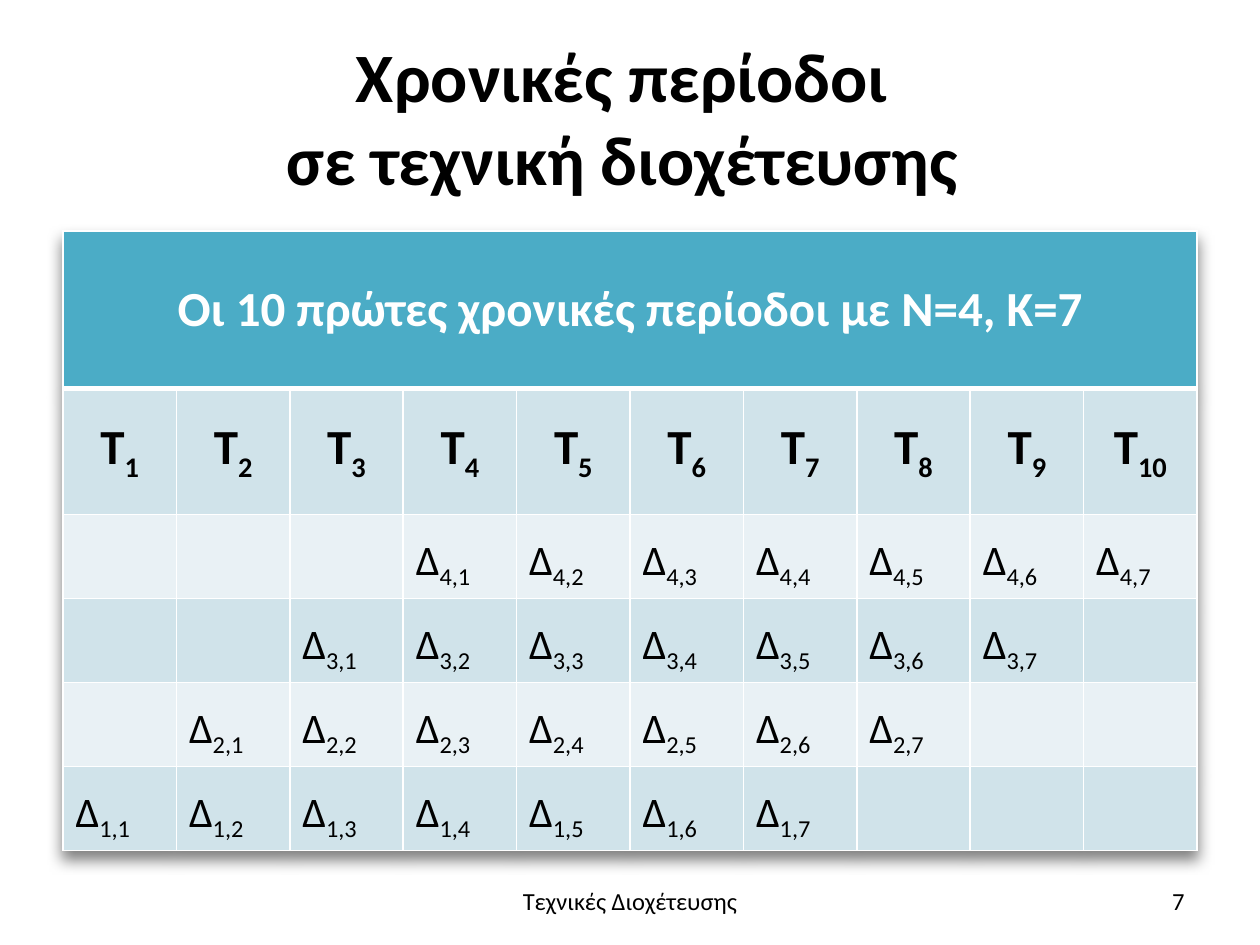
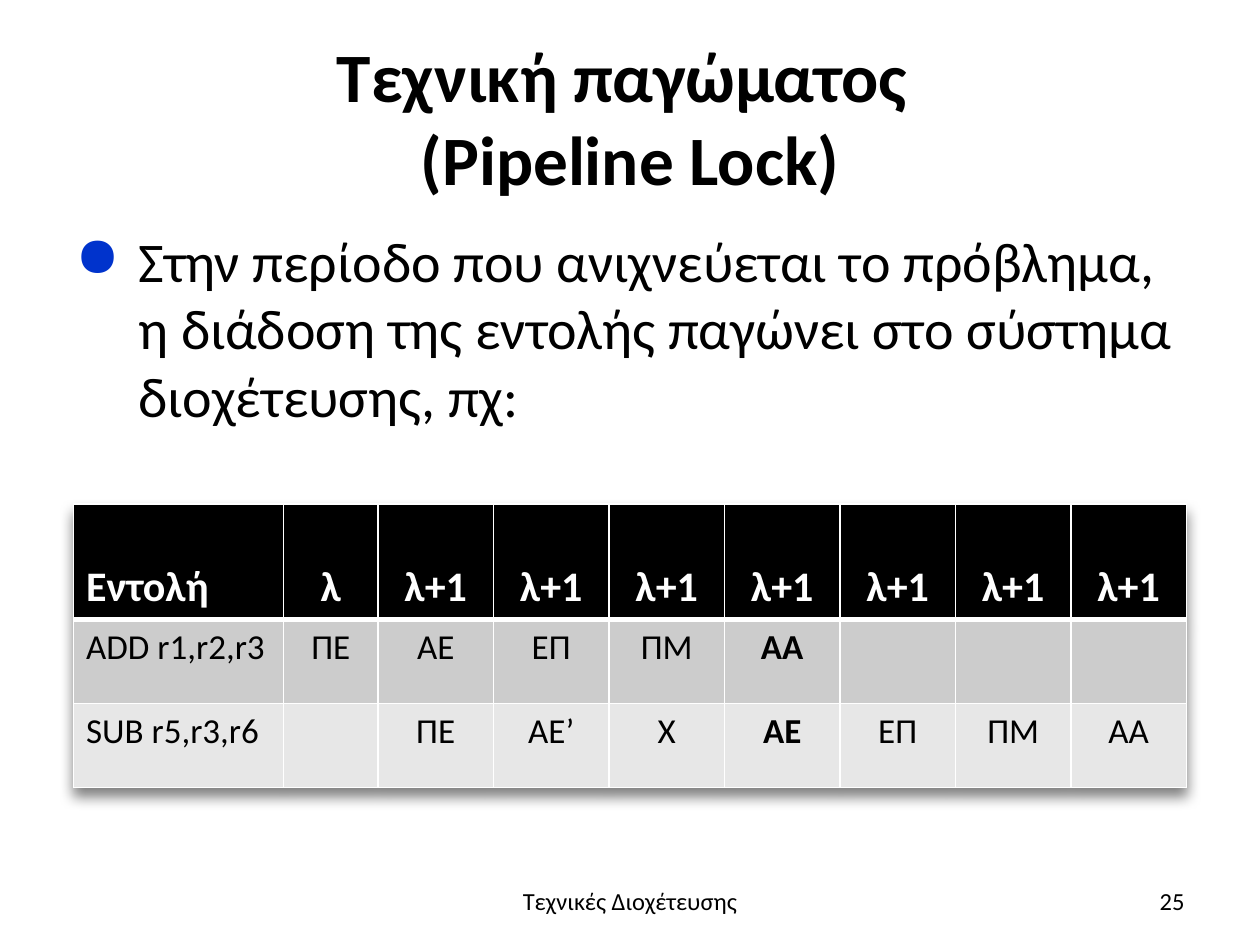
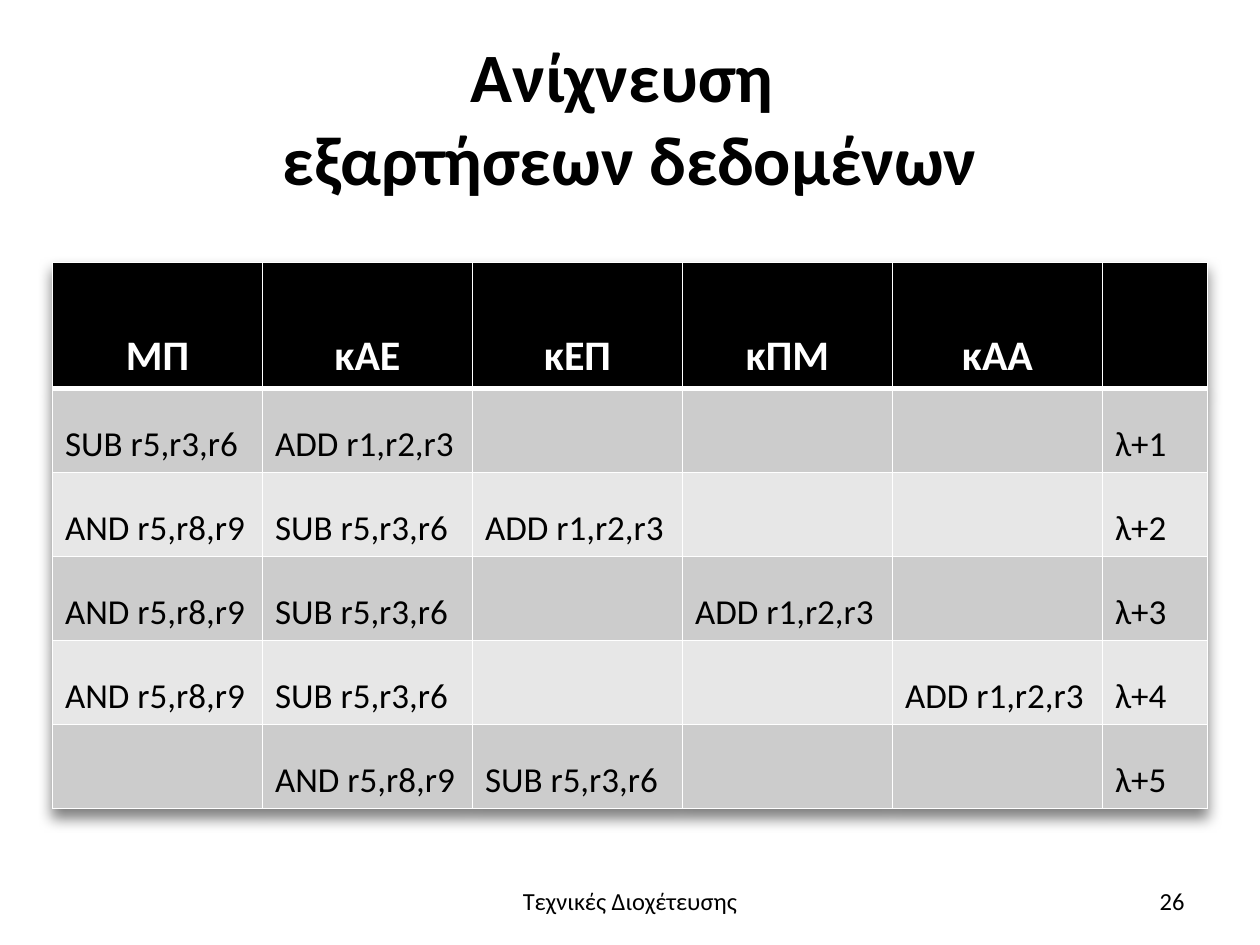
from lxml import etree
from pptx import Presentation
from pptx.dml.color import RGBColor
from pptx.enum.text import MSO_ANCHOR as Anchor, PP_ALIGN as Align
from pptx.oxml import parse_xml
from pptx.oxml.ns import nsdecls, qn
from pptx.util import Inches, Pt

COLORS = {
    "black": "000000", "white": "FFFFFF", "bullet": "0033CC",
    "teal": "4BACC6", "teal_dark": "D0E3EA", "teal_light": "E9F1F5",
    "grey_dark": "CCCCCC", "grey_light": "E7E7E7",
}
FONT = "Calibri"
NO_STYLE = "{2D5ABB26-0587-4C30-8999-92F81FD0307C}"
FOOTER = "Τεχνικές Διοχέτευσης"

presentation = Presentation()
presentation.slide_width = Inches(10)
presentation.slide_height = Inches(7.5)
UNIT = presentation.slide_width / 120  # the grid has 120 columns and 90 rows


def add_text(slide, text, box, size, align, anchor=Anchor.MIDDLE, bold=False):
    shape = slide.shapes.add_textbox(*(round(length * UNIT) for length in box))
    frame = shape.text_frame
    frame.word_wrap = True
    frame.vertical_anchor = anchor
    frame.text = text
    paragraph = frame.paragraphs[0]
    paragraph.alignment = align
    for run in paragraph.runs:
        run.font.name, run.font.size, run.font.bold = FONT, Pt(size), bold
        run.font.color.rgb = RGBColor.from_string(COLORS["black"])
    return paragraph


def add_grid(slide, left, top, widths, heights, texts, fills, sizes, bold_rows=1,
             heading_anchor=Anchor.BOTTOM):
    """Fills are heading, odd and even row; an underscore starts a subscript."""
    box = (left, top, sum(widths), sum(heights))
    frame = slide.shapes.add_table(len(heights), len(widths),
                                   *(round(length * UNIT) for length in box))
    table = frame.table
    table.first_row = table.horz_banding = False
    for column, width in zip(table.columns, widths):
        column.width = round(width * UNIT)
    for row, height in zip(table.rows, heights):
        row.height = round(height * UNIT)

    # Shadow below the whole table
    properties = table._tbl.tblPr
    properties.find(qn("a:tableStyleId")).text = NO_STYLE
    properties.insert(0, parse_xml(
        f'<a:effectLst {nsdecls("a")}><a:outerShdw blurRad="101600" dist="63500" '
        f'dir="5400000" rotWithShape="0"><a:srgbClr val="{COLORS["black"]}">'
        '<a:alpha val="50000"/></a:srgbClr></a:outerShdw></a:effectLst>'))

    for row_index, row_texts in enumerate(texts):
        heading = row_index < bold_rows
        fill = fills[0] if row_index == 0 else fills[2 - row_index % 2]
        ink = "white" if row_index == 0 else "black"
        for column_index, text in enumerate(row_texts):
            cell = table.cell(row_index, column_index)
            cell_properties = cell._tc.get_or_add_tcPr()
            for side in "LRTB" if row_index == 0 else "LRB":
                width = 3 if row_index == 0 and side == "B" else 1
                line = etree.SubElement(cell_properties, qn(f"a:ln{side}"), w=str(Pt(width)))
                solid = etree.SubElement(line, qn("a:solidFill"))
                etree.SubElement(solid, qn("a:srgbClr"), val=COLORS["white"])
            cell.fill.solid()
            cell.fill.fore_color.rgb = RGBColor.from_string(COLORS[fill])
            cell.vertical_anchor = heading_anchor if heading else Anchor.BOTTOM
            paragraph = cell.text_frame.paragraphs[0]
            paragraph.alignment = Align.CENTER if heading else Align.LEFT
            for part_index, part in enumerate(text.split("_") if text else []):
                run = paragraph.add_run()
                run.text = part
                run.font.name, run.font.bold = FONT, heading
                run.font.size = Pt(sizes[0] if heading else sizes[1])
                run.font.color.rgb = RGBColor.from_string(COLORS[ink])
                if part_index:
                    run._r.get_or_add_rPr().set("baseline", "-25000")
    return table


# Titles and footers
slides = []
for title, number in [
    ("Χρονικές περίοδοι \vσε τεχνική διοχέτευσης ", 7),
    ("Τεχνική παγώματος \v(Pipeline Lock)", 25),
    ("Ανίχνευση \vεξαρτήσεων δεδομένων", 26),
]:
    slide = presentation.slides.add_slide(presentation.slide_layouts[6])
    add_text(slide, title, (6, 3.6, 108, 15), 39.6, Align.CENTER, bold=True)
    add_text(slide, FOOTER, (41, 83.4, 38, 4.8), 14, Align.CENTER)
    add_text(slide, str(number), (86, 83.4, 28, 4.8), 14, Align.RIGHT)
    slides.append(slide)
periods_slide, lock_slide, detection_slide = slides

# Time periods: stage s handles item p - s + 1 in period p
PERIODS, STAGES, ITEMS = 10, 4, 7
period_rows = [
    ["Οι 10 πρώτες χρονικές περίοδοι με Ν=4, Κ=7"] + [""] * (PERIODS - 1),
    [f"Τ_{period}" for period in range(1, PERIODS + 1)],
]
for stage in range(STAGES, 0, -1):
    items = [period - stage + 1 for period in range(1, PERIODS + 1)]
    period_rows.append([f"Δ_{stage},{item}" if 1 <= item <= ITEMS else "" for item in items])
periods_table = add_grid(
    periods_slide, 6, 22, [10.8] * PERIODS, [15, 12] + [8] * STAGES, period_rows,
    ("teal", "teal_dark", "teal_light"), (28, 24), bold_rows=2,
    heading_anchor=Anchor.MIDDLE)
periods_table.cell(0, 0).merge(periods_table.cell(0, PERIODS - 1))

# Pipeline lock: bullet
bullet = add_text(
    lock_slide,
    "Στην περίοδο που ανιχνεύεται το πρόβλημα, η διάδοση της εντολής παγώνει "
    "στο σύστημα διοχέτευσης, πχ:",
    (6, 21, 108, 59.4), 32, Align.LEFT, Anchor.TOP)
bullet_properties = bullet._p.get_or_add_pPr()
bullet_properties.set("marL", str(Inches(0.5)))
bullet_properties.set("indent", str(-Inches(0.5)))
bullet_color = etree.SubElement(bullet_properties, qn("a:buClr"))
etree.SubElement(bullet_color, qn("a:srgbClr"), val=COLORS["bullet"])
etree.SubElement(bullet_properties, qn("a:buChar"), char="●")

# Pipeline lock: table
GREYS = ("black", "grey_dark", "grey_light")
ADD, SUB, AND = "ADD r1,r2,r3", "SUB r5,r3,r6", "AND r5,r8,r9"
lock_rows = [
    ["Εντολή", "λ"] + ["λ+1"] * 7,
    [ADD, "ΠΕ", "ΑΕ", "ΕΠ", "ΠΜ", "ΑΑ", "", "", ""],
    [SUB, "", "ΠΕ", "ΑΕ’", "Χ", "ΑΕ", "ΕΠ", "ΠΜ", "ΑΑ"],
]
lock_table = add_grid(lock_slide, 7, 48, [20, 9] + [11] * 7, [11, 8, 8], lock_rows,
                      GREYS, (24, 20))
RESUME_COLUMN = 5
for row_index in range(len(lock_rows)):
    for column_index in range(len(lock_rows[0])):
        cell = lock_table.cell(row_index, column_index)
        paragraph = cell.text_frame.paragraphs[0]
        paragraph.alignment = Align.CENTER if column_index else Align.LEFT
        if row_index:
            cell.vertical_anchor = Anchor.TOP
        if column_index == RESUME_COLUMN:
            paragraph.runs[0].font.bold = True

# Detection of data dependencies
detection_rows = [
    ["ΜΠ", "κΑΕ", "κΕΠ", "κΠΜ", "κΑΑ", ""],
    [SUB, ADD, "", "", "", "λ+1"],
    [AND, SUB, ADD, "", "", "λ+2"],
    [AND, SUB, "", ADD, "", "λ+3"],
    [AND, SUB, "", "", ADD, "λ+4"],
    ["", AND, SUB, "", "", "λ+5"],
]
add_grid(detection_slide, 5, 25, [20] * 5 + [10], [12] + [8] * 5, detection_rows,
         GREYS, (24, 20))

presentation.save("out.pptx")
